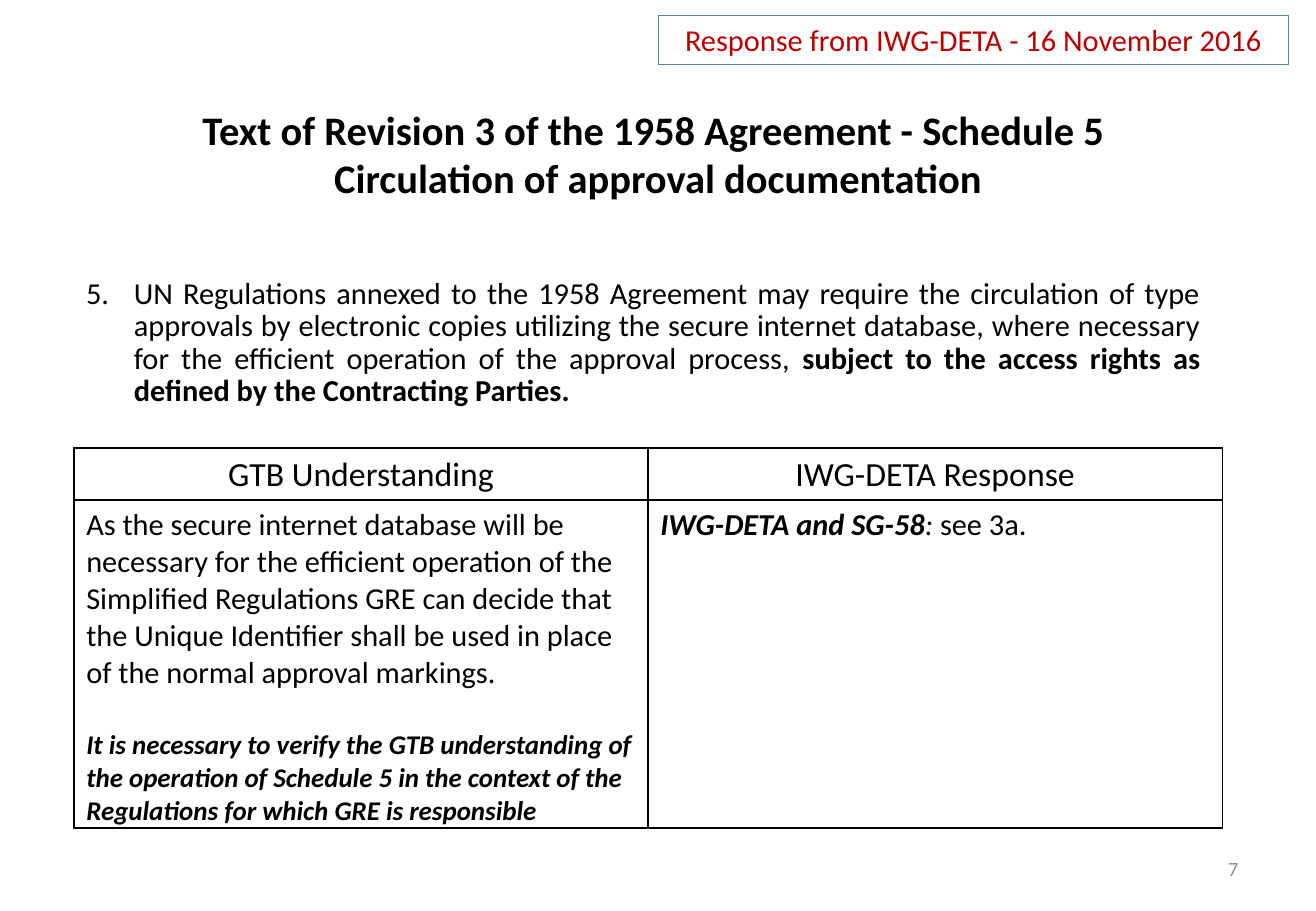
"""Build the slide on Schedule 5 and the circulation of approval documentation."""
from dataclasses import dataclass

from lxml.etree import SubElement
from pptx import Presentation
from pptx.dml.color import RGBColor as RGB
from pptx.enum.shapes import MSO_SHAPE as Shape
from pptx.enum.text import MSO_ANCHOR as Anchor, MSO_AUTO_SIZE as Auto, PP_ALIGN as Align
from pptx.oxml import parse_xml
from pptx.oxml.ns import nsdecls, qn
from pptx.util import Cm, Pt

BLACK = RGB(0x00, 0x00, 0x00)
RED = RGB(0xC0, 0x00, 0x00)
BLUE = RGB(0x4F, 0x81, 0xBD)
GREY = RGB(0x8C, 0x8C, 0x8C)
FONT = "Calibri"


@dataclass(frozen=True)
class Run:
    text: str
    bold: bool = False
    italic: bool = False


@dataclass(frozen=True)
class Para:
    runs: tuple[Run, ...]
    size: float = 18
    before: float = 0


def place(shape, left: float, top: float, width: float, height: float) -> None:
    shape.left, shape.top = Cm(left), Cm(top)
    shape.width, shape.height = Cm(width), Cm(height)


def write(frame, *paras: Para, align=Align.LEFT, color: RGB = BLACK,
          anchor=Anchor.TOP, line: float | None = None, start: int | None = None) -> None:
    frame.word_wrap = True
    frame.vertical_anchor = anchor
    for i, para in enumerate(paras):
        p = frame.paragraphs[0] if i == 0 else frame.add_paragraph()
        p.alignment = align
        if start is not None:
            props = p._p.get_or_add_pPr()
            props.set("marL", str(Cm(1)))
            props.set("indent", str(-Cm(1)))
            SubElement(props, qn("a:buFont"), typeface="+mj-lt")
            SubElement(props, qn("a:buAutoNum"), type="arabicPeriod", startAt=str(start))
        if line:
            p.line_spacing = Pt(line)
        if para.before:
            p.space_before = Pt(para.before)
        for run in para.runs:
            r = p.add_run()
            r.text = run.text
            font = r.font
            font.name, font.size = FONT, Pt(para.size)
            font.bold, font.italic = run.bold, run.italic
            font.color.rgb = color


def border(cell) -> None:
    props = cell._tc.get_or_add_tcPr()
    for i, side in enumerate("LRTB"):
        props.insert(i, parse_xml(
            f'<a:ln{side} {nsdecls("a")} w="{Pt(1)}"><a:solidFill>'
            f'<a:srgbClr val="{BLACK}"/></a:solidFill></a:ln{side}>'))


HEADS = ("GTB Understanding", "IWG-DETA Response")
VIEW = (
    Para((Run("As the secure internet database will be necessary for the efficient "
              "operation of the Simplified Regulations GRE can decide that the Unique "
              "Identifier shall be used in place of the normal approval markings."),)),
    Para((Run("It is necessary to verify the GTB understanding of the operation of "
              "Schedule 5 in the context of the Regulations for which GRE is responsible",
              bold=True, italic=True),), size=16, before=22),
)
REPLY = (Para((Run("IWG-DETA and SG-58", bold=True, italic=True),
               Run(": ", italic=True), Run("see 3a."))),)
CLAUSE = Para((
    Run("UN Regulations annexed to the 1958 Agreement may require the circulation of "
        "type approvals by electronic copies utilizing the secure internet database, "
        "where necessary for the efficient operation of the approval process, "),
    Run("subject to the access rights as defined by the Contracting Parties.", bold=True),
))


def add_title(slide) -> None:
    title = slide.shapes.title
    place(title, 0, 2.06, 27.51, 2.31)
    title.text_frame.auto_size = Auto.NONE
    write(title.text_frame,
          Para((Run("Text of Revision 3 of the 1958 Agreement - Schedule 5 ", bold=True),), 24),
          Para((Run("Circulation of approval documentation", bold=True),), 24),
          align=Align.CENTER)


def add_clause(slide) -> None:
    box = slide.shapes.add_textbox(Cm(1.55), Cm(5.69), Cm(23.8), Cm(2.97))
    write(box.text_frame, CLAUSE, align=Align.JUSTIFY, line=19.2, start=5)


def add_views(slide) -> None:
    table = slide.shapes.add_table(2, 2, Cm(1.55), Cm(9.37), Cm(24), Cm(7.94)).table
    table.first_row = table.horz_banding = False
    table.rows[0].height, table.rows[1].height = Cm(1.09), Cm(6.85)
    heads = tuple((Para((Run(head),), 20),) for head in HEADS)
    for r, row in enumerate((heads, (VIEW, REPLY))):
        for c, paras in enumerate(row):
            cell = table.cell(r, c)
            cell.margin_bottom = Cm(0.03)
            cell.fill.background()
            border(cell)
            write(cell.text_frame, *paras, align=Align.LEFT if r else Align.CENTER)


def add_label(slide) -> None:
    label = slide.shapes.add_shape(Shape.RECTANGLE, Cm(13.77), Cm(0.32), Cm(13.16), Cm(1.03))
    label.shadow.inherit = False
    label.fill.background()
    label.line.color.rgb, label.line.width = BLUE, Pt(0.75)
    write(label.text_frame, Para((Run("Response from IWG-DETA - 16 November 2016"),)),
          align=Align.CENTER, color=RED)


def add_page(slide) -> None:
    box = slide.shapes.add_textbox(Cm(19.71), Cm(17.65), Cm(6.43), Cm(1.02))
    write(box.text_frame, Para((Run("7"),), 12),
          align=Align.RIGHT, color=GREY, anchor=Anchor.MIDDLE)


def main() -> None:
    deck = Presentation()
    deck.slide_width, deck.slide_height = Cm(27.51), Cm(19.05)
    slide = deck.slides.add_slide(deck.slide_layouts.get_by_name("Title Only"))
    for add in (add_clause, add_title, add_views, add_label, add_page):
        add(slide)
    deck.save("out.pptx")


if __name__ == "__main__":
    main()
